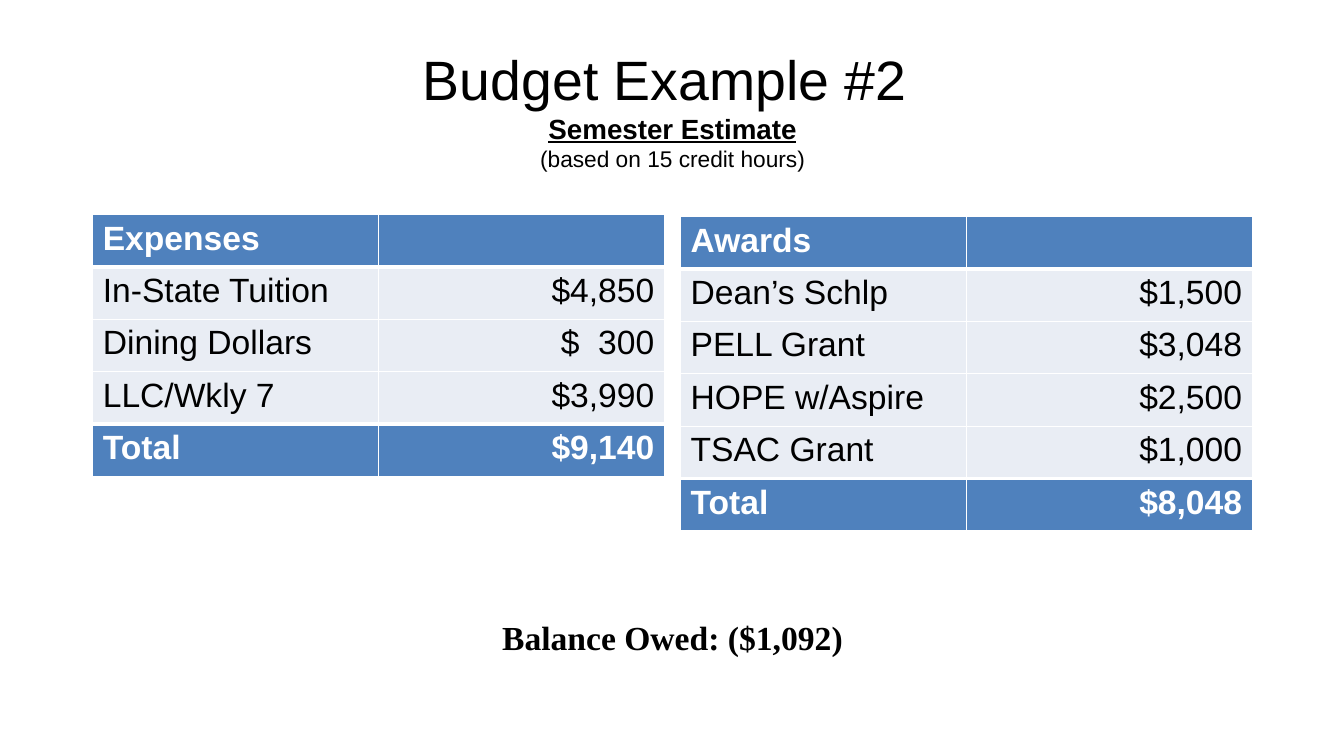
from copy import deepcopy

from lxml import etree
from pptx import Presentation
from pptx import util as u
from pptx.dml.color import RGBColor
from pptx.enum import text
from pptx.oxml import ns

PX = u.Inches(1) // 100
BLACK = RGBColor(0, 0, 0)
WHITE = RGBColor(255, 255, 255)
BLUE = RGBColor(0x4F, 0x81, 0xBD)
PALE = RGBColor(0xE9, 0xED, 0xF4)

LEFT, WIDTH = 92, 1150
TABLE_WIDTH, ROW_HEIGHT = 567, 52
THIN, THICK = 1, 3

EXPENSES = [
    ("Expenses", ""),
    ("In-State Tuition", "$4,850"),
    ("Dining Dollars", "$  300"),
    ("LLC/Wkly 7", "$3,990"),
    ("Total", "$9,140"),
]
AWARDS = [
    ("Awards", ""),
    ("Dean’s Schlp", "$1,500"),
    ("PELL Grant", "$3,048"),
    ("HOPE w/Aspire", "$2,500"),
    ("TSAC Grant", "$1,000"),
    ("Total", "$8,048"),
]


def add_text(para, words, size=24, font="Arial", color=BLACK, bold=False, underline=False):
    span = para.add_run()
    span.text = words
    span.font.size = u.Pt(size)
    span.font.name = font
    span.font.color.rgb = color
    span.font.bold = bold
    span.font.underline = underline
    return span


def add_break_after(para, span):
    """Break the line, giving the break the format of the span before it."""
    para.add_line_break()
    para._p[-1].append(deepcopy(span._r.rPr))


def place(shape, left, top, width, height):
    shape.left, shape.top = left * PX, top * PX
    shape.width, shape.height = width * PX, height * PX


def set_borders(cell, top, bottom):
    props = cell._tc.get_or_add_tcPr()
    for side, points in (("L", THIN), ("R", THIN), ("T", top), ("B", bottom)):
        line = etree.SubElement(props, ns.qn(f"a:ln{side}"), w=str(u.Pt(points)))
        fill = etree.SubElement(line, ns.qn("a:solidFill"))
        etree.SubElement(fill, ns.qn("a:srgbClr"), val=str(WHITE))


def add_heading(page, left, top, width, height):
    title = page.shapes.title
    place(title, left, top, width, height)
    frame = title.text_frame
    frame.word_wrap = True
    frame.auto_size = text.MSO_AUTO_SIZE.NONE
    frame.vertical_anchor = text.MSO_ANCHOR.MIDDLE
    para = frame.paragraphs[0]
    para.alignment = text.PP_ALIGN.CENTER
    add_break_after(para, add_text(para, "Budget Example #2 ", size=39.6))
    add_break_after(para, add_text(para, "Semester Estimate", size=19.8, bold=True, underline=True))
    add_text(para, "(based on 15 credit hours)", size=16.2)


def add_budget_table(page, rows, left, top, width):
    """Draw labels and amounts between a heading row and a total row."""
    height = ROW_HEIGHT * len(rows)
    table = page.shapes.add_table(
        len(rows), 2, left * PX, top * PX, width * PX, height * PX).table
    last = len(rows) - 1
    for r, row in enumerate(rows):
        table.rows[r].height = ROW_HEIGHT * PX
        strong = r in (0, last)
        above = THICK if r in (1, last) else THIN
        below = THICK if r in (0, last - 1) else THIN
        for c, words in enumerate(row):
            cell = table.cell(r, c)
            set_borders(cell, above, below)
            cell.fill.solid()
            cell.fill.fore_color.rgb = BLUE if strong else PALE
            para = cell.text_frame.paragraphs[0]
            para.alignment = text.PP_ALIGN.RIGHT if c else text.PP_ALIGN.LEFT
            if words:
                add_text(para, words, color=WHITE if strong else BLACK, bold=strong)


def add_balance(page, left, top, width, height):
    box = page.shapes.add_textbox(left * PX, top * PX, width * PX, height * PX)
    frame = box.text_frame
    frame.word_wrap = True
    frame.auto_size = text.MSO_AUTO_SIZE.SHAPE_TO_FIT_TEXT
    para = frame.paragraphs[0]
    para.alignment = text.PP_ALIGN.CENTER
    add_text(para, "Balance Owed: ($1,092)", font="Times New Roman", bold=True)


def main():
    deck = Presentation()
    deck.slide_width, deck.slide_height = 1333 * PX, 750 * PX
    page = deck.slides.add_slide(deck.slide_layouts.get_by_name("Title Only"))
    add_heading(page, LEFT, 40, WIDTH, 135)
    add_budget_table(page, EXPENSES, LEFT, 213, TABLE_WIDTH)
    add_budget_table(page, AWARDS, LEFT + WIDTH - TABLE_WIDTH, 215, TABLE_WIDTH)
    add_balance(page, LEFT, 607, WIDTH, 50)
    deck.save("out.pptx")


if __name__ == "__main__":
    main()
